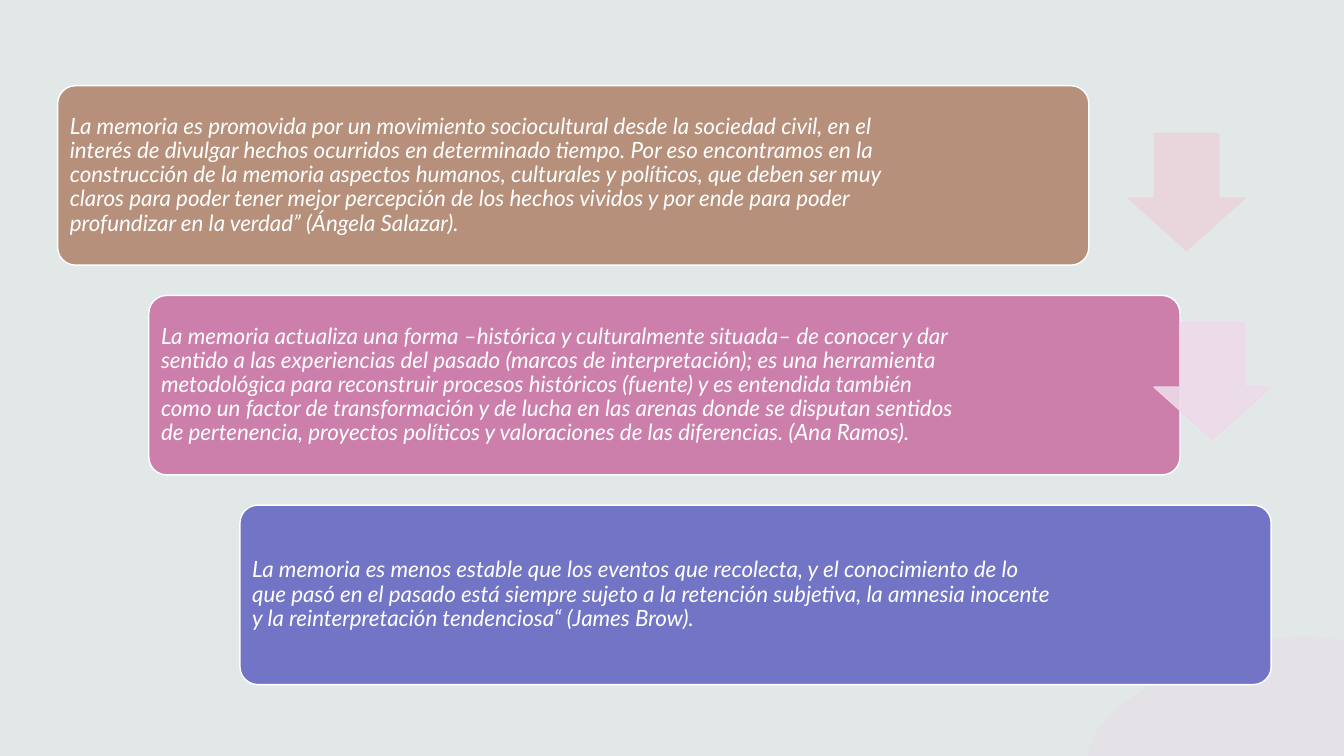
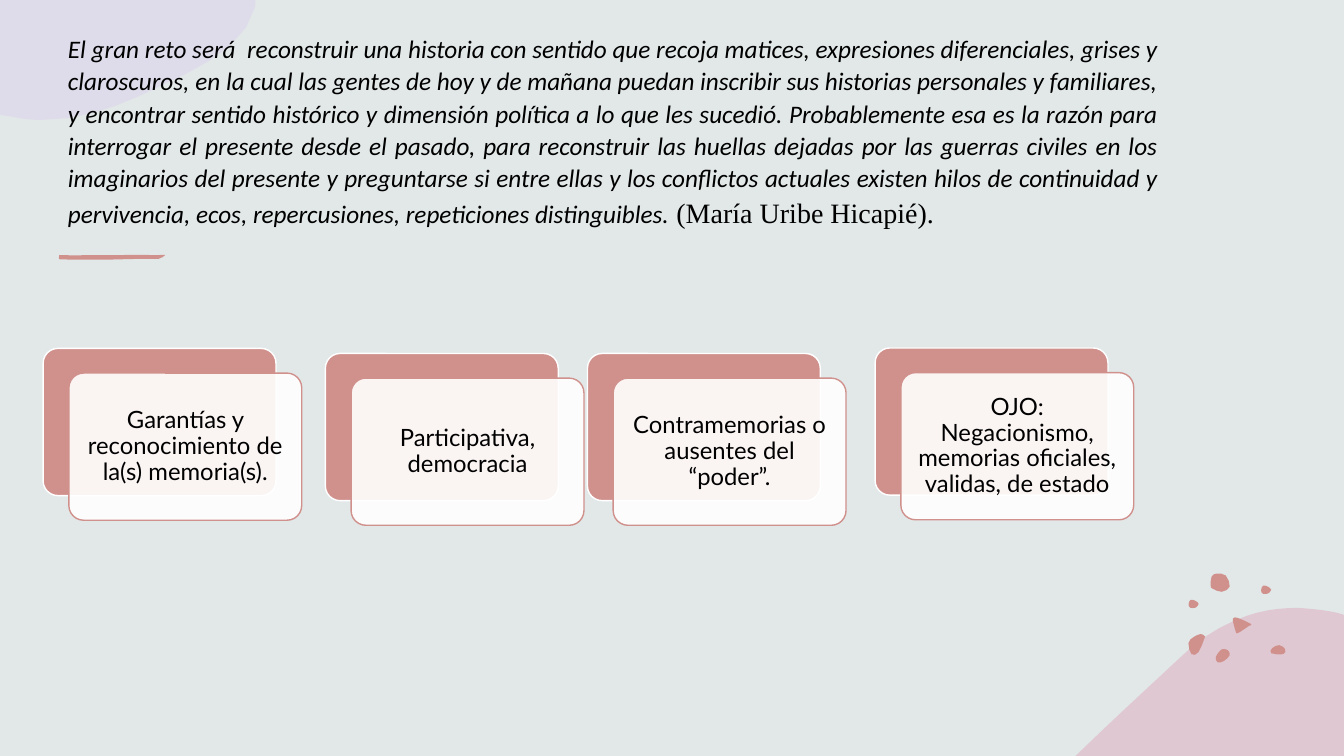
import itertools
from dataclasses import dataclass

import pptx
import pptx.util
import pptx.dml.color
import pptx.enum.shapes
import pptx.enum.text
import pptx.oxml
import pptx.oxml.ns

Pt = pptx.util.Pt
qn = pptx.oxml.ns.qn
PRESET = pptx.enum.shapes.MSO_SHAPE
ALIGN = pptx.enum.text.PP_ALIGN
ANCHOR = pptx.enum.text.MSO_ANCHOR


@dataclass(frozen=True)
class Theme:
    background: str = "E2E8E8"
    lilac: str = "DCD1EC"
    rose: str = "DDAABC"
    pink: str = "ECD1E6"
    coral: str = "D0908C"
    white: str = "FFFFFF"
    black: str = "000000"
    cards: tuple = ("B6907B", "CB7FAA", "7274C6")
    arrows: tuple = ("EAD5DB", "EEDAE9")
    font: str = "Lato"
    passage_font: str = "Calibri"
    source_font: str = "Times New Roman"
    card_size: int = 16
    tile_size: int = 17
    passage_size: int = 18
    source_size: int = 20
    inset: int = 5
    corner: float = 0.1


THEME = Theme()
WIDTH, HEIGHT = 960, 540
CORNER_SIZE = (182.4, 85.7)

CORNER = [
    (0, 0), (182.4, 0), (182.4, 4.3),
    (176.4, 31.7, 144, 48.2, 113.8, 61.9),
    (88.6, 74.2, 61.9, 85.7, 29.5, 85.7),
    (22.3, 85.7, 15.8, 85, 9.4, 83.5), (0, 82.1),
]
HILL = [
    (159.4, 0), (168.7, 0.7, 178.1, 1.4, 187.4, 3.6),
    (192, 5), (192, 105.8), (0, 105.8), (1, 105.1),
    (25.4, 81.3, 50.6, 58.3, 73.7, 36.7),
    (89.5, 20.8, 106.1, 11.5, 122.6, 5.7),
    (134.9, 1.4, 147.1, 0, 159.4, 0),
]
BRUSH = [
    (0.5, 0.2), (12.2, 0.4), (22, 0.2), (38, 0.3), (54, 0), (70, 0.2),
    (76.3, 0), (74.5, 1.6), (71.5, 2.9), (54, 3), (42, 3.3), (34, 3.5),
    (20, 3.4), (8, 3.4), (1, 3.3), (0.2, 2.6),
]
PEBBLE = [(0, 3.6), (1.4, 0), (5, 0.8), (7.2, 2.9), (5.7, 5.1), (4.3, 5.8), (1.4, 5.8)]
DOTS = [
    (20.2, 54, [(5, 0), (8.6, 0.7), (10, 4.3), (5.8, 8.5), (1.4, 9.4), (0, 5.8), (2.8, 1.4)]),
    (0.7, 43.2, [(8.7, 0), (11.5, 1.4), (11.5, 2.9), (7.2, 13), (2.2, 14.4), (0, 6.5), (3.6, 2.2)]),
    (59.8, 51.1, [(5.7, 0), (10, 2.9), (8.6, 6.5), (0, 5.8), (0.7, 2.2)]),
    (16.6, 0, [(0, 8.6), (0.7, 2.2), (4.3, 0), (10.8, 1.4), (13.6, 9.4), (7.9, 13), (1.4, 10.8)]),
    (32.4, 31.7, [(3.6, 0), (13, 4.3), (11.5, 5.7), (5, 10.1), (2.9, 10.8), (2.2, 10.1), (0, 2.1), (0.7, 0)]),
    (52.6, 8.6, PEBBLE),
    (0.8, 18.7, PEBBLE),
]

QUOTES = [
    ("La memoria es promovida por un movimiento sociocultural desde la sociedad civil, en el interés de divulgar hechos ocurridos en determinado tiempo. Por eso encontramos en la construcción de la memoria aspectos humanos, culturales y políticos, que deben ser muy claros para poder tener mejor percepción de los hechos vividos y por ende para poder profundizar en la verdad” (Ángela Salazar).", 135.6),
    ("La memoria actualiza una forma –histórica y culturalmente situada– de conocer y dar sentido a las experiencias del pasado (marcos de interpretación); es una herramienta metodológica para reconstruir procesos históricos (fuente) y es entendida también como un factor de transformación y de lucha en las arenas donde se disputan sentidos de pertenencia, proyectos políticos y valoraciones de las diferencias. (Ana Ramos).", 154),
    ("La memoria es menos estable que los eventos que recolecta, y el conocimiento de lo que pasó en el pasado está siempre sujeto a la retención subjetiva, la amnesia inocente y la reinterpretación tendenciosa“ (James Brow).", 154),
]
PASSAGE = "El gran reto será  reconstruir una historia con sentido que recoja matices, expresiones diferenciales, grises y claroscuros, en la cual las gentes de hoy y de mañana puedan inscribir sus historias personales y familiares, y encontrar sentido histórico y dimensión política a lo que les sucedió. Probablemente esa es la razón para interrogar el presente desde el pasado, para reconstruir las huellas dejadas por las guerras civiles en los imaginarios del presente y preguntarse si entre ellas y los conflictos actuales existen hilos de continuidad y pervivencia, ecos, repercusiones, repeticiones distinguibles."
SOURCE = " (María Uribe Hicapié)."
TILES = [
    (30.8, 248.9, "Garantías y reconocimiento de la(s) memoria(s)."),
    (232.4, 252.5, "Participativa, democracia"),
    (419.6, 252.5, "Contramemorias o ausentes del “poder”."),
    (625.1, 248.6, "OJO: Negacionismo, memorias oficiales, validas, de estado"),
]


def rgb(color):
    return pptx.dml.color.RGBColor.from_string(color)


def fade(parent, opacity):
    for color in parent.iter(qn("a:srgbClr")):
        alpha = pptx.oxml.parse_xml(
            f'<a:alpha {pptx.oxml.ns.nsdecls("a")} val="{opacity * 1000}"/>')
        color.append(alpha)


def paint(shape, fill, opacity=100, line=None, line_opacity=100):
    shape.shadow.inherit = False
    shape.fill.solid()
    shape.fill.fore_color.rgb = rgb(fill)
    properties = shape.element.spPr
    if opacity < 100:
        fade(properties.find(qn("a:solidFill")), opacity)
    if line is None:
        shape.line.fill.background()
        return
    shape.line.color.rgb = rgb(line)
    shape.line.width = Pt(1)
    if line_opacity < 100:
        fade(properties.find(qn("a:ln")), line_opacity)


def add_preset(page, preset, box, adjustments, **colors):
    shape = page.shapes.add_shape(preset, *map(Pt, box))
    for index, value in enumerate(adjustments):
        shape.adjustments[index] = value
    paint(shape, **colors)
    return shape


def trace(outline, steps):
    points = []
    for segment in outline:
        if len(segment) == 2:
            points.append(segment)
            continue
        start = points[-1]
        controls = [start, segment[:2], segment[2:4], segment[4:]]
        for step in range(1, steps + 1):
            t = step / steps
            weights = ((1 - t) ** 3, 3 * t * (1 - t) ** 2, 3 * t * t * (1 - t), t ** 3)
            points.append(tuple(
                sum(weight * control[axis] for weight, control in zip(weights, controls))
                for axis in (0, 1)))
    return points


def rounded(anchors):
    outline = [anchors[0]]
    count = len(anchors)
    for index in range(count):
        before, start, end, after = (anchors[(index + shift) % count] for shift in (-1, 0, 1, 2))
        leave = tuple(s + (e - b) / 6 for b, s, e in zip(before, start, end))
        arrive = tuple(e - (a - s) / 6 for s, e, a in zip(start, end, after))
        outline.append(leave + arrive + tuple(end))
    return outline


def add_outline(page, left, top, outline, fill, opacity=100, steps=5):
    points = [(Pt(left + x), Pt(top + y)) for x, y in trace(outline, steps)]
    builder = page.shapes.build_freeform(*points[0])
    builder.add_line_segments(points[1:], close=True)
    paint(builder.convert_to_shape(), fill, opacity)


def turned(outline, size):
    return [tuple(length - value for length, value in zip(itertools.cycle(size), segment))
            for segment in outline]


def format_span(span, font, size, color, italic=False):
    span.font.name = font
    span.font.size = Pt(size)
    span.font.italic = italic
    span.font.color.rgb = rgb(color)


def write_label(shape, text, size, color, align, italic=False, right=THEME.inset):
    frame = shape.text_frame
    frame.word_wrap = True
    frame.vertical_anchor = ANCHOR.MIDDLE
    frame.margin_left = frame.margin_top = frame.margin_bottom = Pt(THEME.inset)
    frame.margin_right = Pt(right)
    frame.text = text
    para = frame.paragraphs[0]
    para.alignment = align
    para.line_spacing = 0.9
    format_span(para.runs[0], THEME.font, size, color, italic)


def add_dots(page, left, top):
    for x, y, anchors in DOTS:
        add_outline(page, left + x, top + y, rounded(anchors), THEME.coral, steps=2)


def add_quote_card(page, box, text, fill, right):
    card = add_preset(page, PRESET.ROUNDED_RECTANGLE, box, (THEME.corner,),
                      fill=fill, line=THEME.white)
    write_label(card, text, THEME.card_size, THEME.white, ALIGN.LEFT, True, right)


def add_tile(page, box, text):
    left, top, width, height = box
    add_preset(page, PRESET.ROUNDED_RECTANGLE, box, (THEME.corner,),
               fill=THEME.coral, line=THEME.white)
    front = add_preset(page, PRESET.ROUNDED_RECTANGLE, (left + 18.4, top + 17.6, width, height),
                       (THEME.corner,), fill=THEME.white, opacity=90, line=THEME.coral)
    write_label(front, text, THEME.tile_size, THEME.black, ALIGN.CENTER)


def fill_passage(body, box):
    body.left, body.top, body.width, body.height = map(Pt, box)
    frame = body.text_frame
    frame.auto_size = pptx.enum.text.MSO_AUTO_SIZE.NONE
    frame.vertical_anchor = ANCHOR.TOP
    frame.text = PASSAGE
    para = frame.paragraphs[0]
    para.alignment = ALIGN.JUSTIFY
    para.line_spacing = 1.07
    para.space_before, para.space_after = Pt(10), Pt(8)
    format_span(para.runs[0], THEME.passage_font, THEME.passage_size, THEME.black, True)
    source = para.add_run()
    source.text = SOURCE
    format_span(source, THEME.source_font, THEME.source_size, THEME.black)
    properties = next(body.element.iter(qn("a:pPr")))
    properties.set("marL", "0")
    properties.set("indent", "0")
    properties.append(pptx.oxml.parse_xml(f'<a:buNone {pptx.oxml.ns.nsdecls("a")}/>'))


def build_quotes(deck):
    page = deck.slides.add_slide(deck.slide_layouts[6])
    corner_width, corner_height = CORNER_SIZE
    add_outline(page, WIDTH - corner_width, HEIGHT - corner_height,
                turned(CORNER, CORNER_SIZE), THEME.pink, 25)
    for index, ((text, right), fill) in enumerate(zip(QUOTES, THEME.cards)):
        box = (41.2 + 65.1 * index, 61.2 + 149.8 * index, 736.6, 128.2)
        add_quote_card(page, box, text, fill, right)
    for index, color in enumerate(THEME.arrows):
        box = (805.8 + 18.5 * index, 95.5 + 135 * index, 83.5, 83.5)
        add_preset(page, PRESET.DOWN_ARROW, box, (0.55, 0.45), fill=color, opacity=90,
                   line=color, line_opacity=90)


def build_challenge(deck):
    page = deck.slides.add_slide(deck.slide_layouts[1])
    title, body = page.placeholders
    title.element.getparent().remove(title.element)
    add_outline(page, 768, 434.2, HILL, THEME.rose, 50)
    add_dots(page, 848.2, 409.7)
    add_outline(page, 0, 0, CORNER, THEME.lilac, 50)
    add_outline(page, 41.8, 182, BRUSH, THEME.coral)
    fill_passage(body, (41.3, 18.7, 793.4, 459.4))
    body.element.getparent().append(body.element)
    for left, top, text in TILES:
        add_tile(page, (left, top, 166.3, 105.1), text)


def main():
    deck = pptx.Presentation()
    deck.slide_width, deck.slide_height = Pt(WIDTH), Pt(HEIGHT)
    backdrop = deck.slide_master.background.fill
    backdrop.solid()
    backdrop.fore_color.rgb = rgb(THEME.background)
    build_quotes(deck)
    build_challenge(deck)
    deck.save("out.pptx")


if __name__ == "__main__":
    main()
